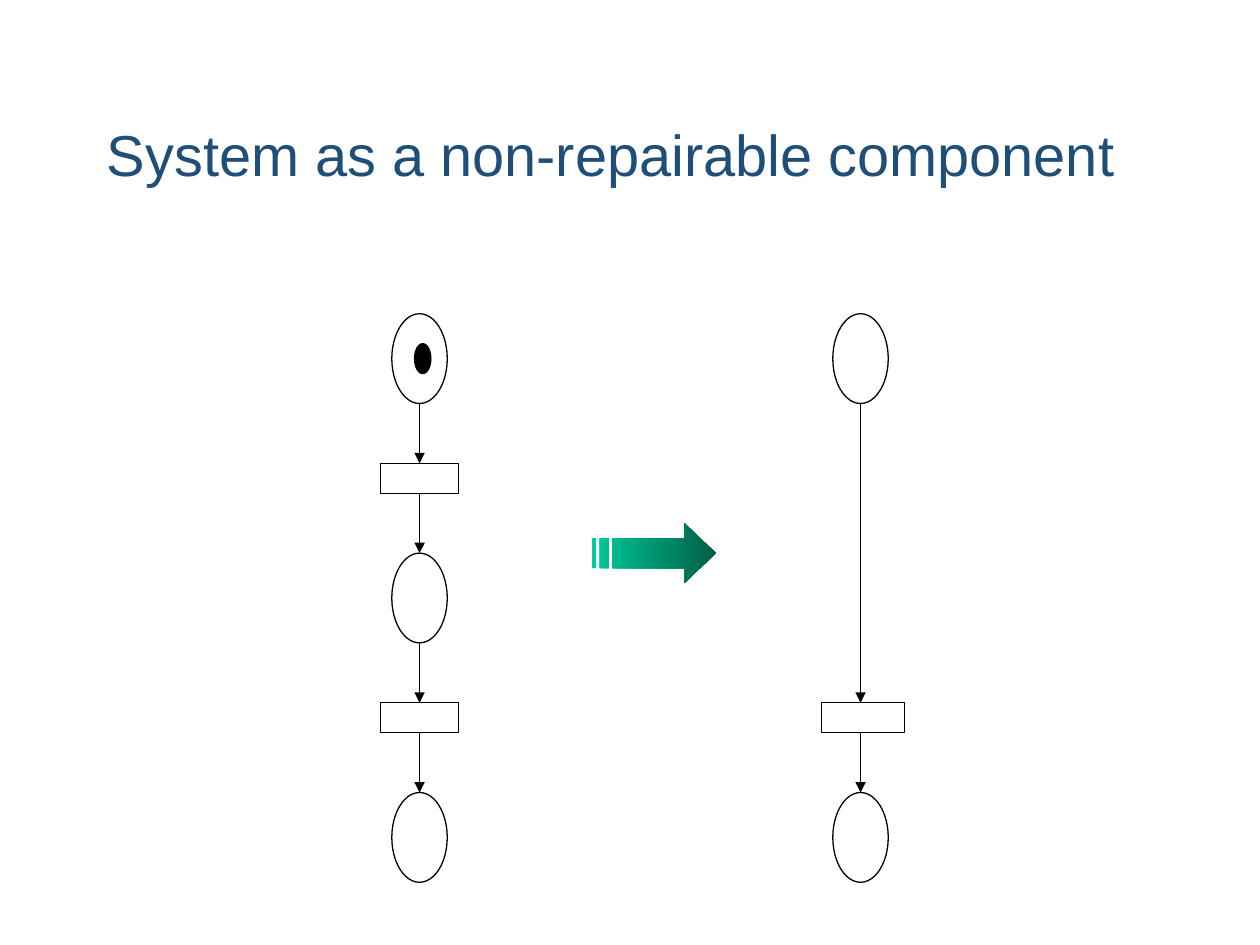
from lxml import etree
from pptx import Presentation
from pptx.dml.color import RGBColor
from pptx.enum.shapes import MSO_CONNECTOR, MSO_SHAPE
from pptx.enum.text import MSO_ANCHOR
from pptx.oxml.ns import qn
from pptx.util import Inches, Pt

ELLIPSE = MSO_SHAPE.OVAL
RECTANGLE = MSO_SHAPE.RECTANGLE
STRAIGHT = MSO_CONNECTOR.STRAIGHT
MIDDLE = MSO_ANCHOR.MIDDLE

COLORS = {"title": "1F4E79", "ink": "000000", "arrow_start": "00CC99", "arrow_end": "005E46"}
WIDTH, HEIGHT = 10, 7.5
LEFT, TOP = 3.33, 2.49
COLUMN, ROW = 0.04, 0.2375
PLACE_WIDTH, PLACE_ROWS = 11, 3


class NetSlide:
    """Draws Petri net elements on a grid of columns and rows."""

    def __init__(self, slide):
        self.slide = slide
        self.shapes = slide.shapes

    def color(self, name):
        return RGBColor.from_string(COLORS[name])

    def point(self, column, row):
        return Inches(LEFT + column * COLUMN), Inches(TOP + row * ROW)

    def title(self, text, left, top, width, height):
        box = self.shapes.add_textbox(
            Inches(left * WIDTH), Inches(top * HEIGHT), Inches(width * WIDTH), Inches(height * HEIGHT)
        )
        frame = box.text_frame
        frame.word_wrap = True
        frame.vertical_anchor = MIDDLE
        frame.margin_bottom = Inches(0.52)
        frame.text = text
        paragraph = frame.paragraphs[0]
        paragraph.line_spacing = 0.9
        font = paragraph.runs[0].font
        font.name, font.size = "Arial", Pt(33)
        font.color.rgb = self.color("title")

    def outline(self, kind, column, row, columns, rows, filled=False):
        shape = self.shapes.add_shape(
            kind, *self.point(column, row), Inches(columns * COLUMN), Inches(rows * ROW)
        )
        shape.shadow.inherit = False
        if filled:
            shape.fill.solid()
            shape.fill.fore_color.rgb = self.color("ink")
        else:
            shape.fill.background()
        shape.line.color.rgb = self.color("ink")
        shape.line.width = Pt(0.75)

    def place(self, center, row):
        self.outline(ELLIPSE, center - PLACE_WIDTH / 2, row, PLACE_WIDTH, PLACE_ROWS)

    def token(self, center, row):
        self.outline(ELLIPSE, center - 1, row, 3.25, 1, filled=True)

    def transition(self, center, row, columns):
        self.outline(RECTANGLE, center - 7.75, row, columns, 1)

    def arc(self, center, start_row, end_row):
        connector = self.shapes.add_connector(
            STRAIGHT, *self.point(center, start_row), *self.point(center, end_row)
        )
        connector.line.color.rgb = self.color("ink")
        connector.line.width = Pt(0.75)
        etree.SubElement(connector.line._get_or_add_ln(), qn("a:tailEnd"), type="triangle")
        etree.SubElement(connector._element.spPr, qn("a:effectLst"))

    def striped_arrow(self, contours):
        first, *others = [[self.point(*corner) for corner in contour] for contour in contours]
        builder = self.shapes.build_freeform(*first[0])
        builder.add_line_segments(first[1:], close=True)
        for contour in others:
            builder.move_to(*contour[0])
            builder.add_line_segments(contour[1:], close=True)
        shape = builder.convert_to_shape()
        shape.shadow.inherit = False
        shape.line.fill.background()
        shape.fill.gradient()
        shape.fill.gradient_angle = 0
        for stop, name, position in zip(shape.fill.gradient_stops, ("arrow_start", "arrow_end"), (0, 1)):
            stop.color.rgb = self.color(name)
            stop.position = position


def bar(left, right):
    return [(left, 7.5), (left, 8.5), (right, 8.5), (right, 7.5)]


def main():
    presentation = Presentation()
    presentation.slide_width, presentation.slide_height = Inches(WIDTH), Inches(HEIGHT)
    net = NetSlide(presentation.slides.add_slide(presentation.slide_layouts[6]))

    net.title("System as a non-repairable component", 0.075, 0.112, 0.823, 0.172)

    component, system = 0, 87.5
    for row in (0, 8, 16):
        net.place(component, row)
    net.token(component, 1)
    for row in (5, 13):
        net.transition(component, row, 15.5)
        net.arc(component, row - 2, row)
        net.arc(component, row + 1, row + 3)

    for row in (0, 16):
        net.place(system, row)
    net.transition(system, 13, 16.5)
    net.arc(system, 3, 13)
    net.arc(system, 14, 16)

    head = [(52.5, 7), (52.5, 7.5), (38.25, 7.5), (38.25, 8.5), (52.5, 8.5), (52.5, 9), (58.75, 8)]
    net.striped_arrow([head, bar(35.75, 37.5), bar(34.25, 35)])

    presentation.save("out.pptx")


if __name__ == "__main__":
    main()
